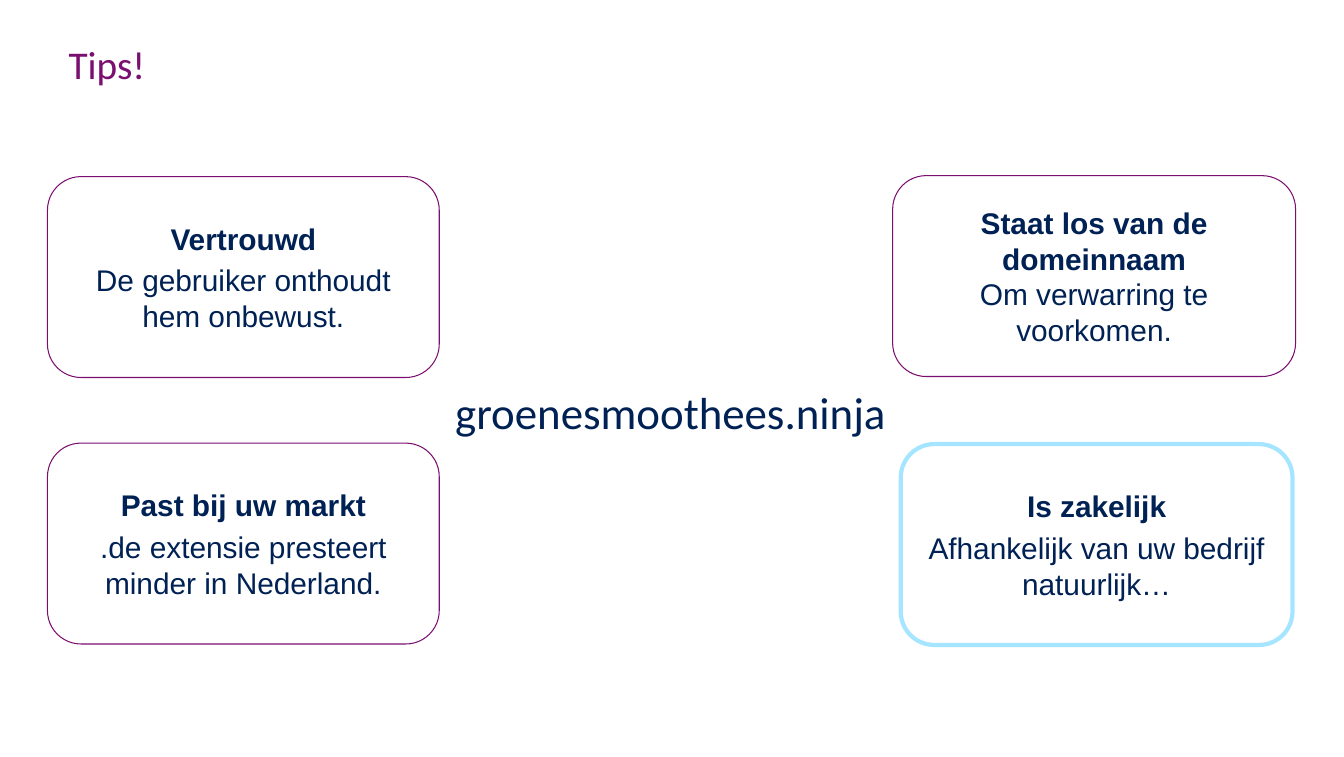
from dataclasses import dataclass

from pptx import Presentation
from pptx.dml.color import RGBColor as RGB
from pptx.enum.shapes import MSO_SHAPE as Shape
from pptx.enum.text import MSO_ANCHOR as Anchor, MSO_AUTO_SIZE as Fit, PP_ALIGN as Align
from pptx.util import Pt

PX = 9144  # 100 px to the inch


@dataclass(frozen=True)
class Theme:
    white: RGB = RGB(0xFF, 0xFF, 0xFF)
    plum: RGB = RGB(0x7B, 0x0F, 0x70)
    navy: RGB = RGB(0x00, 0x21, 0x54)
    sky: RGB = RGB(0xA6, 0xE5, 0xFF)
    sans: str = "Arial"
    head: str = "Calibri"
    body: float = 21.3
    title: float = 28
    name: float = 32


LOOK = Theme()


def scale(box):
    return [side * PX for side in box]


def write(frame, lines, font, size, color, bold=False, align=Align.LEFT,
          pad=(10, 5, 10, 5), gap=0, wrap=True, joined=False):
    """Fill the frame; bold marks the first line, joined keeps one paragraph."""
    frame.word_wrap = wrap
    frame.vertical_anchor = Anchor.MIDDLE
    (frame.margin_left, frame.margin_top,
     frame.margin_right, frame.margin_bottom) = scale(pad)
    para = frame.paragraphs[0]
    para.alignment = align
    for i, line in enumerate(lines):
        if i and joined:
            para.add_line_break()
        elif i:
            para = frame.add_paragraph()
            para.alignment = align
            para.space_before = Pt(gap)
        run = para.add_run()
        run.text = line
        run.font.name = font
        run.font.size = Pt(size)
        run.font.bold = bold and i == 0
        run.font.color.rgb = color
    return para


def card(slide, box, lines, edge=LOOK.plum, width=0.75, joined=False):
    shape = slide.shapes.add_shape(Shape.ROUNDED_RECTANGLE, *scale(box))
    shape.shadow.inherit = False
    shape.fill.solid()
    shape.fill.fore_color.rgb = LOOK.white
    shape.line.color.rgb = edge
    shape.line.width = Pt(width)
    write(shape.text_frame, lines, LOOK.sans, LOOK.body, LOOK.navy, bold=True,
          align=Align.CENTER, pad=(13, 7, 13, 7), gap=4, joined=joined)


def title(slide, box, text):
    frame = slide.shapes.add_textbox(*scale(box)).text_frame
    para = write(frame, [text], LOOK.head, LOOK.title, LOOK.plum,
                 pad=(20, 0, 12, 0))
    para.line_spacing = Pt(24)
    para.space_after = Pt(1)


def domain(slide, box, text):
    frame = slide.shapes.add_textbox(*scale(box)).text_frame
    write(frame, [text], LOOK.head, LOOK.name, LOOK.navy, wrap=False)
    frame.auto_size = Fit.SHAPE_TO_FIT_TEXT


def tips(slide, box):
    """Place two cards at the left of the box and two at its right."""
    x, y, w, h = box
    wide, tall = 388, 199
    low = y + h - tall
    card(slide, (x, y + 1, wide, tall),
         ["Vertrouwd", "De gebruiker onthoudt hem onbewust."])
    card(slide, (x, low - 1, wide, tall),
         ["Past bij uw markt", ".de extensie presteert minder in Nederland."])
    card(slide, (x + w - 399, y, 399, tall),
         ["Staat los van de domeinnaam", "Om verwarring te voorkomen."],
         joined=True)
    card(slide, (x + w - wide - 3, low, wide, tall),
         ["Is zakelijk", "Afhankelijk van uw bedrijf natuurlijk…"],
         edge=LOOK.sky, width=3)


def main():
    deck = Presentation()
    deck.slide_width, deck.slide_height = scale((1331, 750))
    slide = deck.slides.add_slide(deck.slide_layouts[6])
    tips(slide, (47, 174, 1236, 465))
    title(slide, (48, 33, 1248, 73), "Tips!")
    domain(slide, (441, 376, 447, 64), "groenesmoothees.ninja")
    deck.save("out.pptx")


if __name__ == "__main__":
    main()
